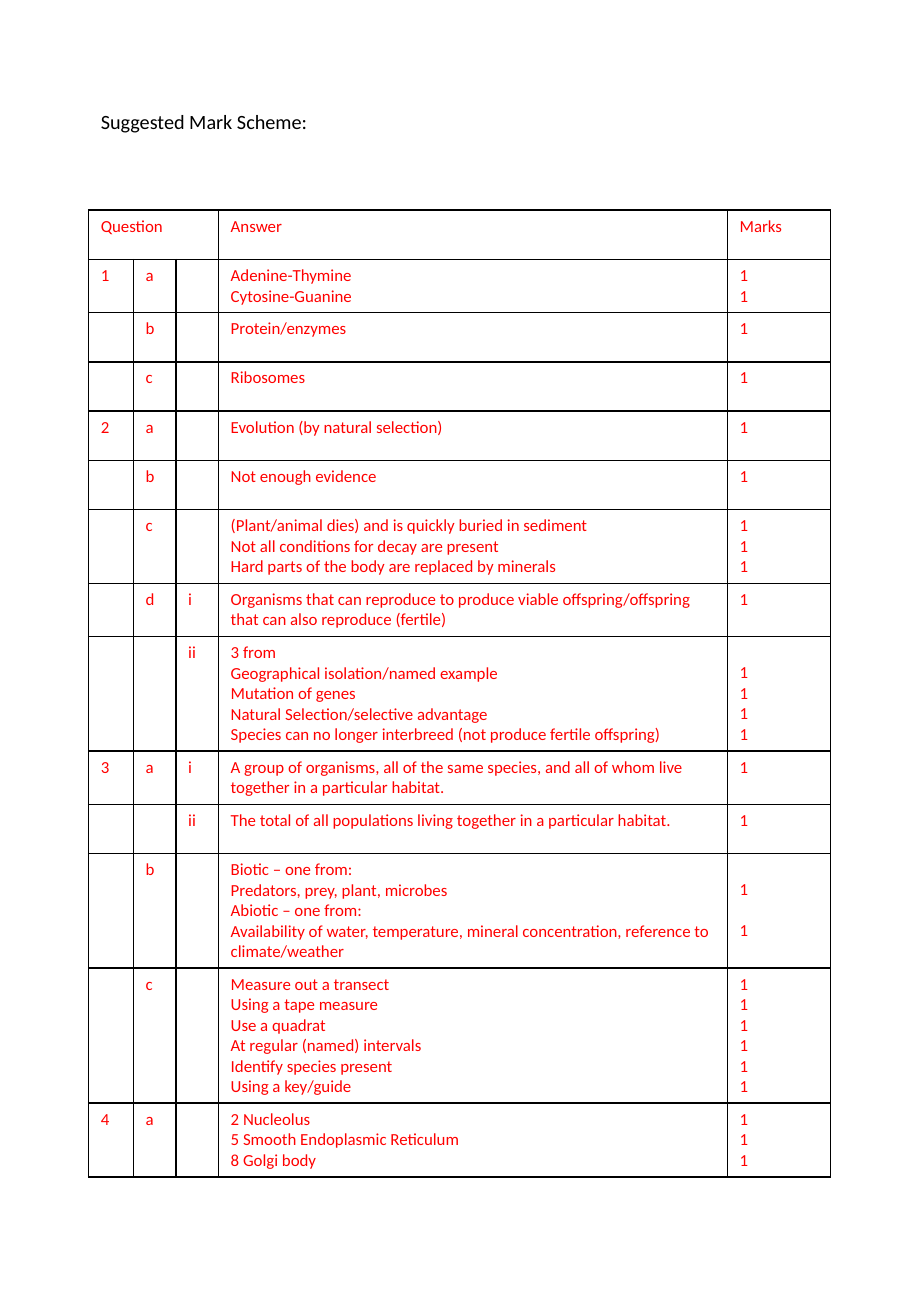
from lxml import etree
from pptx import Presentation
from pptx.dml.color import RGBColor
from pptx.enum.text import MSO_ANCHOR, PP_ALIGN
from pptx.oxml.ns import qn
from pptx.util import Inches, Pt

TITLE = "Suggested Mark Scheme:"
HEADER = ("Question", "", "", ["Answer"], ["Marks"])
# Number, part, sub-part, answer lines, mark beside each line ("" for none)
ANSWERS = [
    ("1", "a", "", ["Adenine-Thymine", "Cytosine-Guanine"], ["1"] * 2),
    ("", "b", "", ["Protein/enzymes"], ["1"]),
    ("", "c", "", ["Ribosomes"], ["1"]),
    ("2", "a", "", ["Evolution (by natural selection)"], ["1"]),
    ("", "b", "", ["Not enough evidence"], ["1"]),
    ("", "c", "", ["(Plant/animal dies) and is quickly buried in sediment",
                   "Not all conditions for decay are present",
                   "Hard parts of the body are replaced by minerals"], ["1"] * 3),
    ("", "d", "i", ["Organisms that can reproduce to produce viable offspring/offspring "
                    "that can also reproduce (fertile)"], ["1"]),
    ("", "", "ii", ["3 from", "Geographical isolation/named example", "Mutation of genes",
                    "Natural Selection/selective advantage",
                    "Species can no longer interbreed (not produce fertile offspring)"],
     [""] + ["1"] * 4),
    ("3", "a", "i", ["A group of organisms, all of the same species, and all of whom live "
                     "together in a particular habitat."], ["1"]),
    ("", "", "ii", ["The total of all populations living together in a particular habitat."],
     ["1"]),
    ("", "b", "", ["Biotic – one from:", "Predators, prey, plant, microbes",
                   "Abiotic – one from:",
                   "Availability of water, temperature, mineral concentration, "
                   "reference to climate/weather"], ["", "1", "", "1"]),
    ("", "c", "", ["Measure out a transect", "Using a tape measure", "Use a quadrat",
                   "At regular (named) intervals", "Identify species present",
                   "Using a key/guide"], ["1"] * 6),
    ("4", "a", "", ["2 Nucleolus", "5 Smooth Endoplasmic Reticulum", "8 Golgi body"],
     ["1"] * 3),
]
COL_WIDTHS = (0.37, 0.35, 0.35, 4.19, 0.85)
LEFT, TABLE_TOP, ROWS_HEIGHT = 0.73, 1.73, 5.68
FONT, BLACK, RED = "Calibri", "000000", "FF0000"
LINE_PT, PAD = 12, Inches(0.05)


def rgb(color):
    return RGBColor.from_string(color)


def add_run(p, text, size, color):
    r = p.add_run()
    r.text = text
    r.font.size, r.font.name, r.font.bold = Pt(size), FONT, False
    r.font.color.rgb = rgb(color)


def set_borders(cell, color, width):
    tc_pr = cell._tc.get_or_add_tcPr()
    for side in ("a:lnL", "a:lnR", "a:lnT", "a:lnB"):
        ln = etree.SubElement(tc_pr, qn(side), w=str(Pt(width)))
        fill = etree.SubElement(ln, qn("a:solidFill"))
        etree.SubElement(fill, qn("a:srgbClr"), val=color)


def fill_cell(cell, lines):
    """Write the lines; an empty one becomes space above the next."""
    tf = cell.text_frame
    skipped, first = 0, True
    for line in lines:
        if not line:
            skipped += 1
            continue
        p = tf.paragraphs[0] if first else tf.add_paragraph()
        if first:
            cell.margin_top = PAD + Pt(skipped * LINE_PT)
        elif skipped:
            p.space_before = Pt(skipped * LINE_PT)
        add_run(p, line, 10, RED)
        skipped, first = 0, False


prs = Presentation()
prs.slide_width, prs.slide_height = Inches(7.5), Inches(10.83)
slide = prs.slides.add_slide(prs.slide_layouts[5])

# Title
title = slide.shapes.title
title.left, title.top = Inches(LEFT), Inches(0.82)
title.width, title.height = Inches(5.68), Inches(0.32)
tf = title.text_frame
tf.word_wrap, tf.vertical_anchor = True, MSO_ANCHOR.TOP
p = tf.paragraphs[0]
p.alignment, p.line_spacing = PP_ALIGN.LEFT, 1.14
add_run(p, TITLE, 12, BLACK)

# Mark scheme table
rows = [HEADER] + ANSWERS
table = slide.shapes.add_table(
    len(rows), len(COL_WIDTHS), Inches(LEFT), Inches(TABLE_TOP),
    Inches(sum(COL_WIDTHS)), Inches(ROWS_HEIGHT)).table
table.first_row = table.horz_banding = False
for col, width in zip(table.columns, COL_WIDTHS):
    col.width = Inches(width)
table.cell(0, 0).merge(table.cell(0, 2))

for i, (number, part, sub, answers, marks) in enumerate(rows):
    for j, lines in enumerate(([number], [part], [sub], answers, marks)):
        cell = table.cell(i, j)
        set_borders(cell, BLACK, 1)
        cell.fill.background()
        fill_cell(cell, lines)

prs.save("out.pptx")
